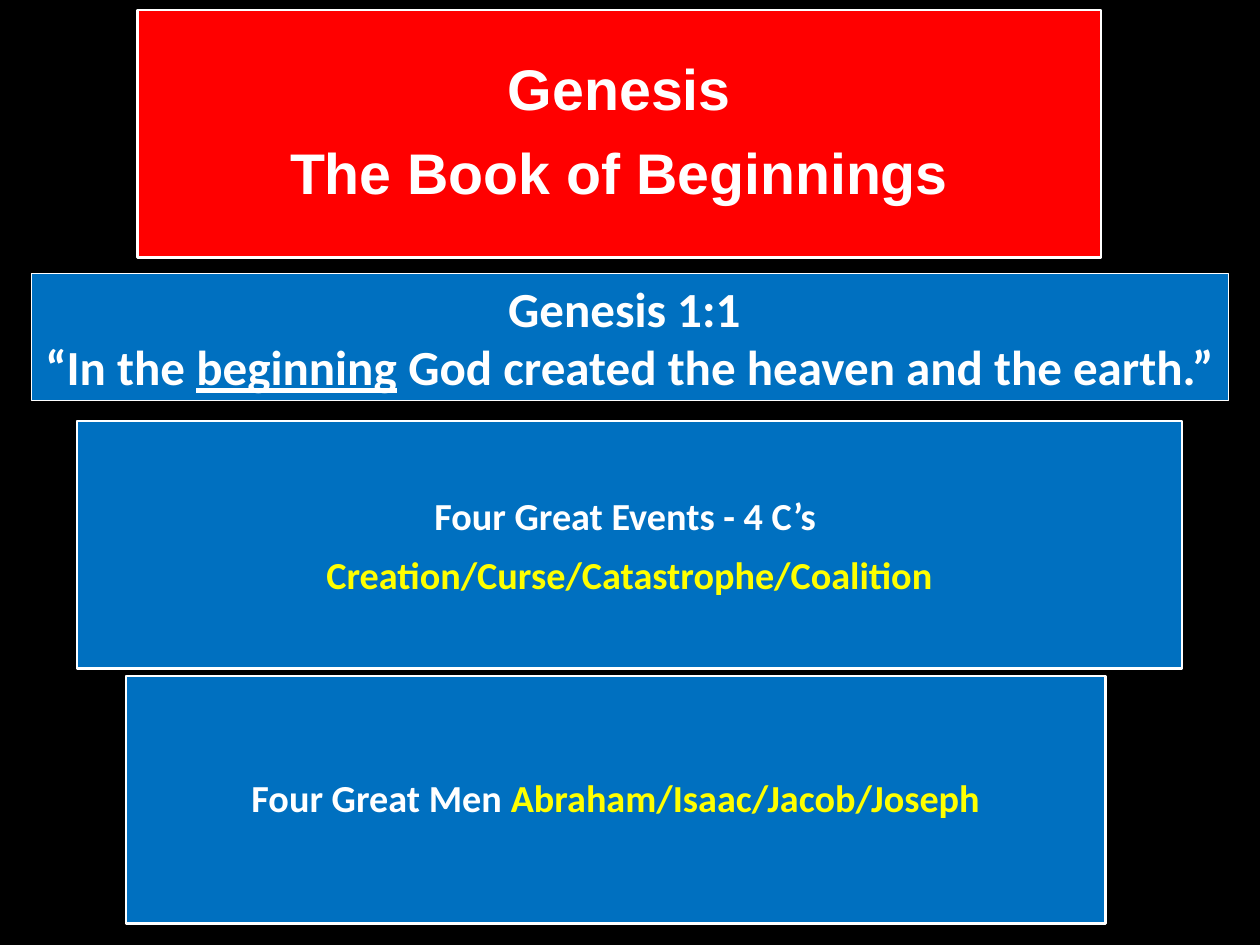
from dataclasses import dataclass

from pptx import Presentation
from pptx import util as u
from pptx.dml.color import RGBColor
from pptx.enum import shapes, text


@dataclass(frozen=True)
class Theme:
    back: str = "000000"
    red: str = "FF0000"
    blue: str = "0070C0"
    white: str = "FFFFFF"
    yellow: str = "FFFF00"
    heading_font: str = "Arial"
    body_font: str = "Calibri"
    heading_size: float = 48
    verse_size: float = 41.1
    body_size: float = 32


def rgb(value):
    return RGBColor.from_string(value)


class Deck:
    """Holds the theme and the current slide."""

    def __init__(self, theme, width, height):
        self.theme = theme
        self.prs = Presentation()
        self.prs.slide_width, self.prs.slide_height = u.Pt(width), u.Pt(height)

    def slide(self):
        self.s = self.prs.slides.add_slide(self.prs.slide_layouts[5])
        fill = self.s.background.fill
        fill.solid()
        fill.fore_color.rgb = rgb(self.theme.back)

    def heading(self, box, lines, **look):
        sp = self.s.shapes.title
        for name, value in zip(("left", "top", "width", "height"), box):
            setattr(sp, name, u.Pt(value))
        self.style(sp, lines, **look)

    def panel(self, box, lines, **look):
        sp = self.s.shapes.add_shape(
            shapes.MSO_SHAPE.RECTANGLE, *(u.Pt(v) for v in box))
        sp.shadow.inherit = False
        self.style(sp, lines, **look)

    def style(self, sp, lines, fill, font, size, border=2, inset=(9.4, 9.4),
              gap=0, spacing=1.0):
        """Each line is a list of (words, run format) pairs."""
        sp.fill.solid()
        sp.fill.fore_color.rgb = rgb(fill)
        sp.line.color.rgb = rgb(self.theme.white)
        sp.line.width = u.Pt(border)
        tf = sp.text_frame
        side, end = (u.Pt(v) for v in inset)
        frame = {"word_wrap": True, "auto_size": text.MSO_AUTO_SIZE.NONE,
                 "vertical_anchor": text.MSO_ANCHOR.MIDDLE,
                 "margin_left": side, "margin_right": side,
                 "margin_top": end, "margin_bottom": end}
        for name, value in frame.items():
            setattr(tf, name, value)
        for i, line in enumerate(lines):
            p = tf.add_paragraph() if i else tf.paragraphs[0]
            para = {"alignment": text.PP_ALIGN.CENTER, "line_spacing": spacing,
                    "space_before": u.Pt(gap if i else 0),
                    "space_after": u.Pt(0)}
            for name, value in para.items():
                setattr(p, name, value)
            for words, extra in line:
                r = p.add_run()
                r.text = words
                extra = dict(extra)
                r.font.color.rgb = rgb(extra.pop("color", self.theme.white))
                form = {"name": font, "size": u.Pt(size), "bold": True, **extra}
                for name, value in form.items():
                    setattr(r.font, name, value)


def main():
    t = Theme()
    deck = Deck(t, 1056, 792)
    deck.slide()
    accent = {"color": t.yellow}
    panel = {"fill": t.blue, "font": t.body_font}
    height = 207.4  # shared by the three large boxes

    # Title
    deck.heading((115.2, 8.6, 807.8, height),
                 [[("Genesis", {})], [("The Book of Beginnings", {})]],
                 fill=t.red, font=t.heading_font, size=t.heading_size,
                 inset=(14.4, 14.4), gap=19, spacing=0.9)

    # Events
    deck.panel((64.8, 352.8, 925.9, height),
               [[("Four Great Events - 4 C’s ", {})],
                [("Creation/Curse/Catastrophe/Coalition", accent)]],
               size=t.body_size, gap=11, **panel)

    # Men
    deck.panel((105.8, 566.6, 820.8, height),
               [[("Four Great Men ", {}),
                 ("Abraham/Isaac/Jacob/Joseph", accent)]],
               size=t.body_size, spacing=0.9, **panel)

    # Key verse
    deck.panel((26.6, 229, 1003, 106.6),
               [[("Genesis 1:1 ", {})],
                [("“In the ", {}), ("beginning", {"underline": True}),
                 (" God created the heaven and the earth.”", {})]],
               size=t.verse_size, border=0.75, inset=(7.2, 3.6), **panel)

    deck.prs.save("out.pptx")


if __name__ == "__main__":
    main()
